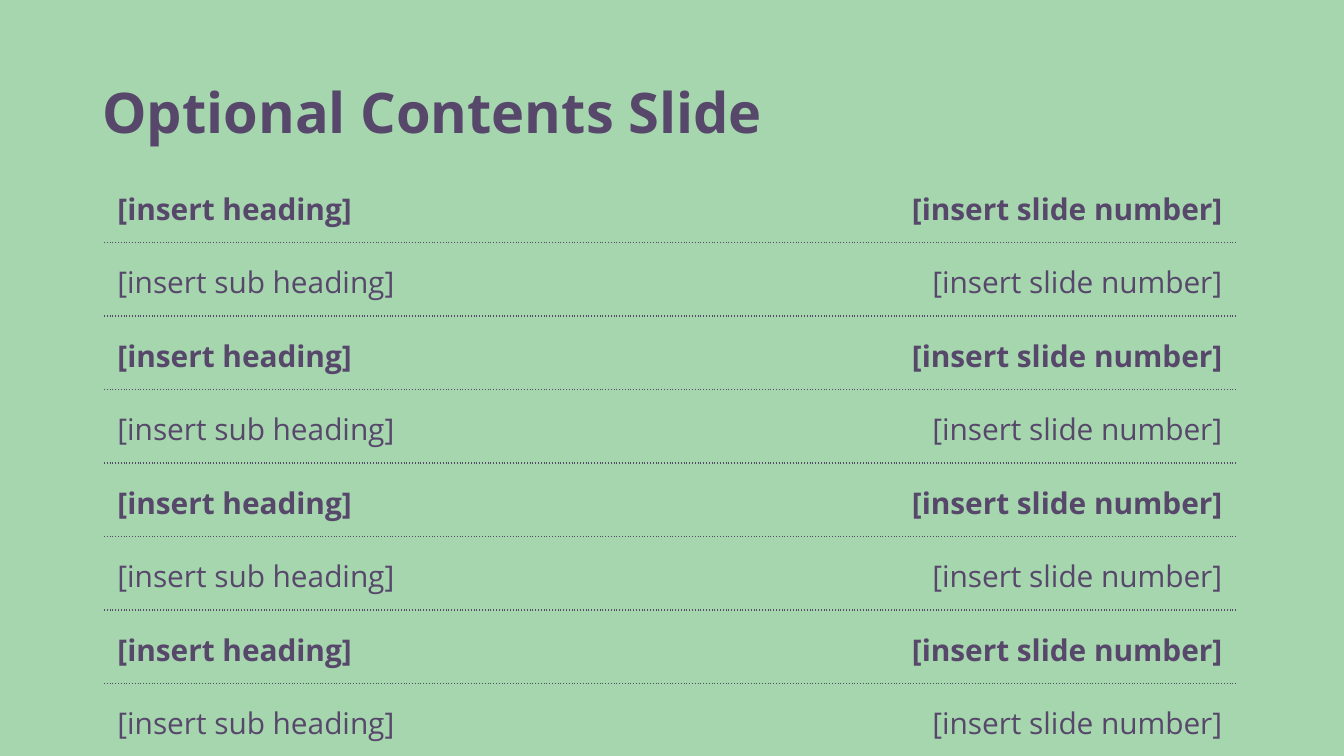
"""Build a contents slide with a table of headings and slide numbers."""
from lxml import etree
from pptx import Presentation
from pptx.dml.color import RGBColor
from pptx.enum.text import MSO_ANCHOR, MSO_AUTO_SIZE, PP_ALIGN
from pptx.oxml import parse_xml
from pptx.oxml.ns import nsdecls, qn
from pptx.util import Emu, Pt

LEFT, RIGHT = PP_ALIGN.LEFT, PP_ALIGN.RIGHT
TOP, MIDDLE = MSO_ANCHOR.TOP, MSO_ANCHOR.MIDDLE
FIXED = MSO_AUTO_SIZE.NONE
INK, GREEN = "57486B", "A6D6AE"
PLAIN = "{2D5ABB26-0587-4C30-8999-92F81FD0307C}"
ROWS = [("[insert heading]", True), ("[insert sub heading]", False)] * 4
PAGE = "[insert slide number]"
PAD = Pt(7.2)


def px(n):
    return Emu(round(n * 914400 / 134.4))


def style(para, size, bold, align=LEFT):
    para.alignment = align
    font = para.font
    font.name, font.size, font.bold = "Open Sans", Pt(size), bold
    font.color.rgb = RGBColor.from_string(INK)


deck = Presentation()
deck.slide_width, deck.slide_height = px(1344), px(756)
slide = deck.slides.add_slide(deck.slide_layouts[5])
back = slide.background.fill
back.solid()
back.fore_color.rgb = RGBColor.from_string(GREEN)

title = slide.shapes.title
title.left, title.top, title.width, title.height = px(89), px(66), px(1163), px(90)
frame = title.text_frame
frame.text = "Optional Contents Slide"
frame.auto_size = FIXED
frame.vertical_anchor = MIDDLE
frame.margin_left = frame.margin_right = PAD
frame.margin_top = frame.margin_bottom = PAD
style(frame.paragraphs[0], 30, True)

holder = slide.shapes.add_table(len(ROWS), 2, px(104), px(169), px(1132), px(60 * len(ROWS)))
table = holder.table
table.first_row = table.horz_banding = False
table._tbl.tblPr.find(qn("a:tableStyleId")).text = PLAIN
table.columns[0].width, table.columns[1].width = px(786), px(346)

for row, (label, bold) in zip(table.rows, ROWS):
    for cell, text, align in zip(row.cells, (label, PAGE), (LEFT, RIGHT)):
        cell.text = text
        cell.vertical_anchor = TOP
        cell.margin_left = cell.margin_right = PAD
        cell.margin_top = cell.margin_bottom = PAD
        cell.fill.background()
        para = cell.text_frame.paragraphs[0]
        para.line_spacing = 1.15
        style(para, 16, bold, align)
        line = parse_xml(f'<a:lnB {nsdecls("a")} w="{Pt(0.75)}"/>')
        ink = etree.SubElement(line, qn("a:solidFill"))
        etree.SubElement(ink, qn("a:srgbClr"), val=INK)
        etree.SubElement(line, qn("a:prstDash"), val="dot")
        cell._tc.tcPr.insert(0, line)

deck.save("out.pptx")
